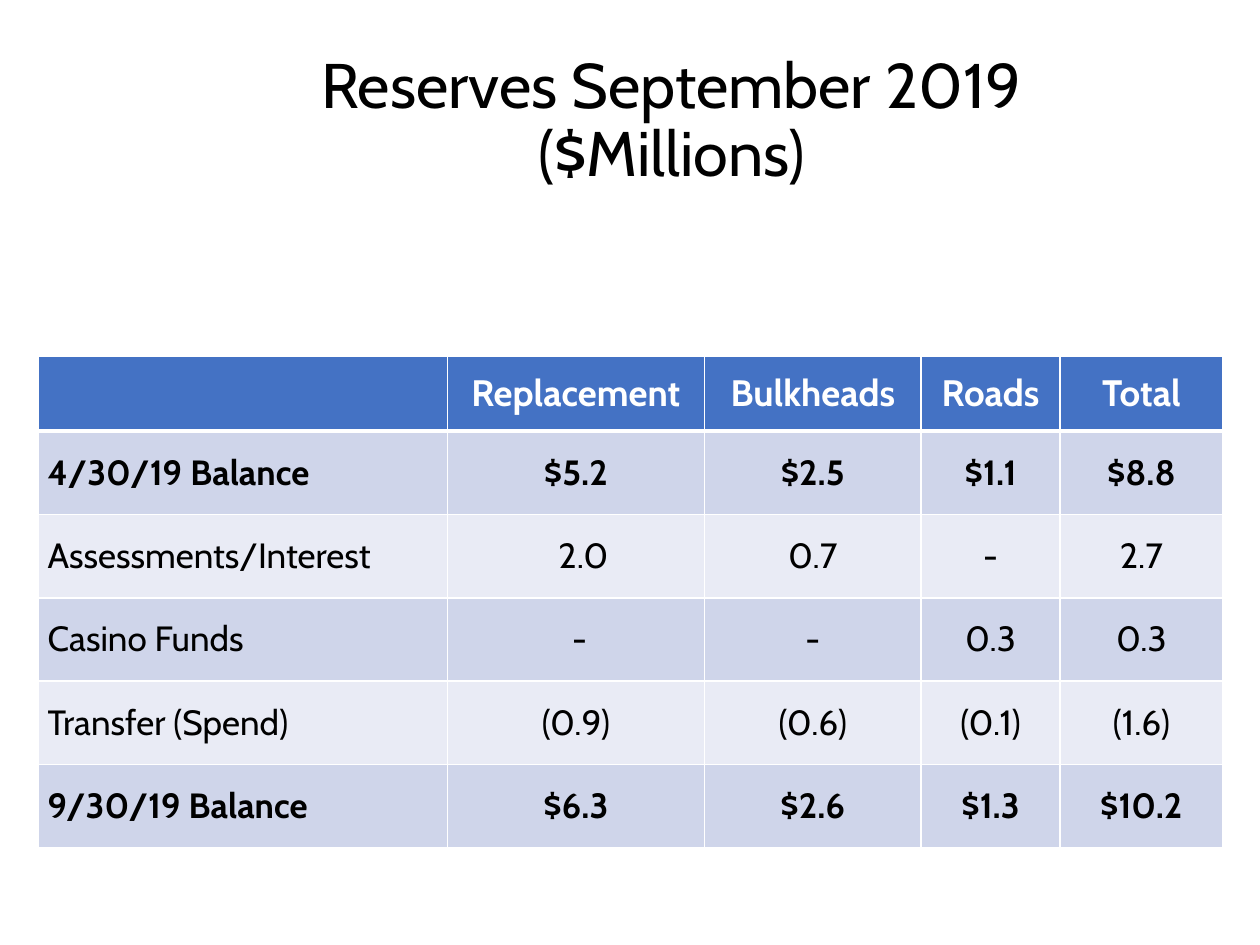
"""Build the reserves slide: a title over a table of balances."""
from dataclasses import dataclass

from lxml import etree
from pptx import Presentation
from pptx.dml.color import RGBColor
from pptx.enum.text import MSO_ANCHOR, MSO_AUTO_SIZE, PP_ALIGN
from pptx.oxml.ns import qn
from pptx.util import Cm, Pt

LEFT, CENTER = PP_ALIGN.LEFT, PP_ALIGN.CENTER
MIDDLE = MSO_ANCHOR.MIDDLE
NO_FIT = MSO_AUTO_SIZE.NONE
TITLE_ONLY = 5


@dataclass(frozen=True)
class Theme:
    font: str = "Cabin"
    text: str = "000000"
    white: str = "FFFFFF"
    header: str = "4472C4"
    bands: tuple = ("CFD5EA", "E9EBF5")
    title_size: int = 36
    header_size: int = 21
    body_size: int = 20
    line: int = 1
    header_line: int = 3


COLUMNS = [8.25, 5.18, 4.37, 2.8, 3.28]
HEADER_HEIGHT, ROW_HEIGHT = 1.5, 1.68
MARGIN_X, MARGIN_Y = 0.19, 0.13
RESERVES = [
    ["", "Replacement", "Bulkheads", "Roads", "Total"],
    ["4/30/19 Balance", "$5.2", "$2.5", "$1.1", "$8.8"],
    ["Assessments/Interest", "2.0", "0.7", "-", "2.7"],
    ["Casino Funds", "-", "-", "0.3", "0.3"],
    ["Transfer (Spend)", "(0.9)", "(0.6)", "(0.1)", "(1.6)"],
    ["9/30/19 Balance", "$6.3", "$2.6", "$1.3", "$10.2"],
]
BALANCE_ROWS = {1, 5}
INDENTS = {(2, 1): 0.3, (3, 1): 0.15}


def write(tf, text, *, font, size, color, bold=False, align=CENTER, spacing=None):
    p = tf.paragraphs[0]
    p.alignment = align
    p.line_spacing = spacing
    r = p.add_run()
    r.text = text
    r.font.name = font
    r.font.size = Pt(size)
    r.font.bold = bold
    r.font.color.rgb = RGBColor.from_string(color)


def set_border(cell, side, width, color):
    ln = etree.SubElement(cell._tc.get_or_add_tcPr(), qn(f"a:ln{side}"), w=str(Pt(width)))
    fill = etree.SubElement(ln, qn("a:solidFill"))
    etree.SubElement(fill, qn("a:srgbClr"), val=color)


class SlideBuilder:
    def __init__(self, prs, theme):
        self.theme = theme
        self.s = prs.slides.add_slide(prs.slide_layouts[TITLE_ONLY])

    def title(self, text, left, top, width, height):
        t = self.theme
        sp = self.s.shapes.title
        sp.left, sp.top, sp.width, sp.height = map(Cm, (left, top, width, height))
        tf = sp.text_frame
        tf.word_wrap = True
        tf.auto_size = NO_FIT
        tf.vertical_anchor = MIDDLE
        write(tf, text, font=t.font, size=t.title_size, color=t.text, spacing=0.9)

    def table(self, rows, left, top):
        heights = [HEADER_HEIGHT] + [ROW_HEIGHT] * (len(rows) - 1)
        table = self.s.shapes.add_table(
            len(rows), len(COLUMNS), Cm(left), Cm(top), Cm(sum(COLUMNS)), Cm(sum(heights))
        ).table
        for column, width in zip(table.columns, COLUMNS):
            column.width = Cm(width)
        for i, (row, height) in enumerate(zip(rows, heights)):
            table.rows[i].height = Cm(height)
            for j, text in enumerate(row):
                self.cell(table.cell(i, j), text, i, j)

    def cell(self, cell, text, i, j):
        t = self.theme
        header = i == 0
        cell.vertical_anchor = MIDDLE
        cell.margin_left = Cm(MARGIN_X + INDENTS.get((i, j), 0))
        cell.margin_right = Cm(MARGIN_X)
        cell.margin_top = cell.margin_bottom = Cm(MARGIN_Y)
        for side in "LRTB":
            thick = (header and side == "B") or (i == 1 and side == "T")
            set_border(cell, side, t.header_line if thick else t.line, t.white)
        cell.fill.solid()
        cell.fill.fore_color.rgb = RGBColor.from_string(
            t.header if header else t.bands[(i - 1) % 2]
        )
        if text:
            write(
                cell.text_frame, text, font=t.font,
                size=t.header_size if header else t.body_size,
                color=t.white if header else t.text,
                bold=header or i in BALANCE_ROWS,
                align=CENTER if header or j else LEFT,
            )


def main():
    prs = Presentation()
    prs.slide_width, prs.slide_height = Cm(25.4), Cm(19.05)
    slide = SlideBuilder(prs, Theme())
    slide.title("Reserves September 2019 ($Millions)", 3.63, 1.65, 19.81, 1.63)
    slide.table(RESERVES, 0.77, 7.19)
    prs.save("out.pptx")


if __name__ == "__main__":
    main()
